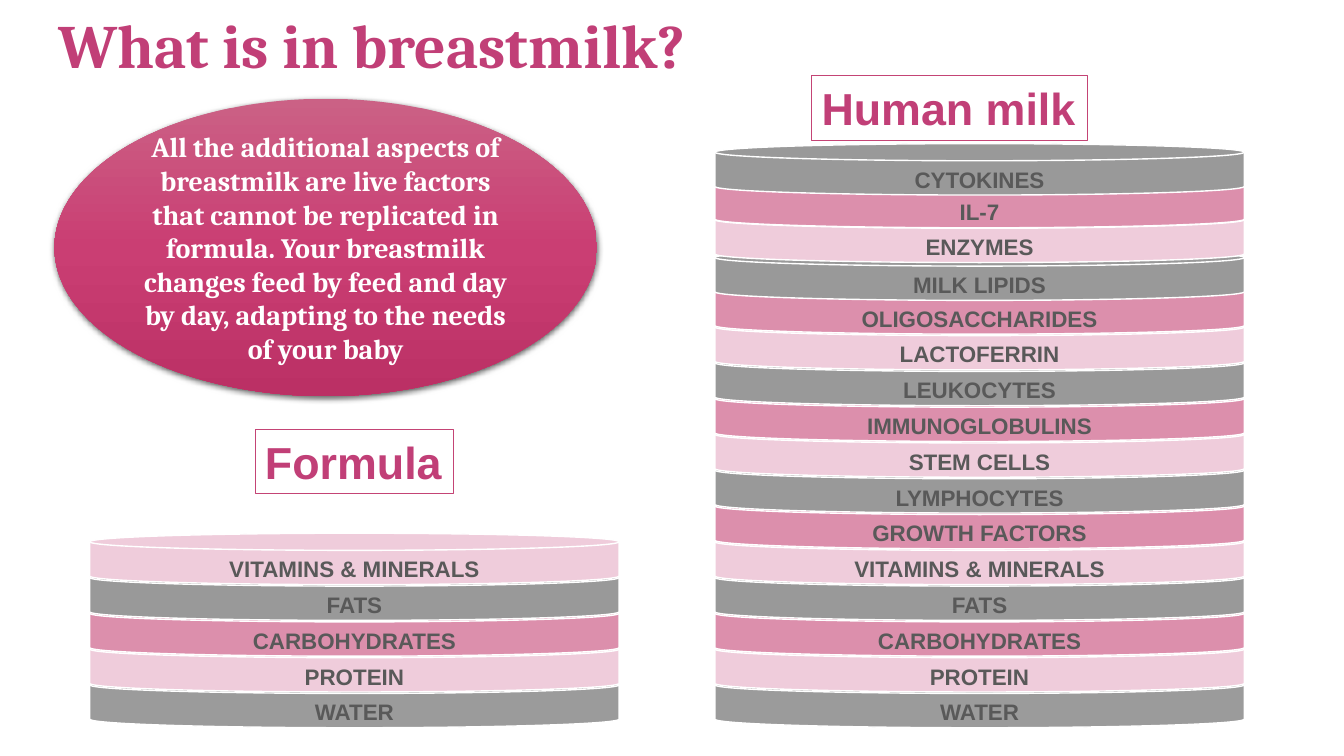
import pptx
import pptx.dml.color
import pptx.enum.shapes
import pptx.enum.text
import pptx.oxml
import pptx.oxml.ns
import pptx.util
from pptx.util import Inches

COLORS = {
    "title": "C13F77", "border": "C44475", "label": "595959", "white": "FFFFFF",
    "base": "9B9B9B", "gray": "999999", "pale": "EFCCDB", "rose": "DC8FAC",
    "top": "CB6185", "middle": "CA3E73", "bottom": "BB3065", "shadow": "000000",
}
TITLE = "What is in breastmilk?"
MESSAGE = (
    "All the additional aspects of breastmilk are live factors that cannot be "
    "replicated in formula. Your breastmilk changes feed by feed and day by day, "
    "adapting to the needs of your baby"
)
HEADINGS = [
    ("Formula", (2.53, 4.26, 1.97, 0.64)),
    ("Human milk", (8.05, 0.75, 2.74, 0.64)),
]
SHARED = ["WATER", "PROTEIN", "CARBOHYDRATES", "FATS", "VITAMINS & MINERALS"]
HUMAN_ONLY = [
    "GROWTH FACTORS", "LYMPHOCYTES", "STEM CELLS", "IMMUNOGLOBULINS",
    "LEUKOCYTES", "LACTOFERRIN", "OLIGOSACCHARIDES", "MILK LIPIDS",
    "ENZYMES", "IL-7", "CYTOKINES",
]
STACKS = [(0.89, SHARED), (7.09, SHARED + HUMAN_ONLY)]
LAYER_FILLS = ["gray", "pale", "rose"]
# Small downward shifts from the even spacing.
SHIFTS = {"MILK LIPIDS": 0.02, "IL-7": 0.01, "CYTOKINES": 0.04}
BASE_TOP, LAYER_STEP = 6.71, 0.355
LAYER_WIDTH, LAYER_HEIGHT = 5.25, 0.51
MESSAGE_PLACE = (0.54, 0.98, 5.38, 2.95)
TITLE_PLACE = (0.48, 0.12, 10.78, 0.72)

SHAPES = pptx.enum.shapes.MSO_SHAPE
ALIGN = pptx.enum.text.PP_ALIGN
ANCHOR = pptx.enum.text.MSO_ANCHOR


def color(name):
    return pptx.dml.color.RGBColor.from_string(COLORS[name])


def write(box, text, font, size, ink, align, anchor, wrap=True):
    frame = box.text_frame
    for name, value in {"word_wrap": wrap, "vertical_anchor": anchor}.items():
        setattr(frame, name, value)
    para = frame.paragraphs[0]
    para.alignment = align
    span = para.add_run()
    span.text = text
    for name, value in {"name": font, "size": pptx.util.Pt(size), "bold": True}.items():
        setattr(span.font, name, value)
    span.font.color.rgb = color(ink)
    return para


def add_shape(page, kind, place, fill=None, line=None, width=1):
    shape = page.shapes.add_shape(kind, *map(Inches, place))
    shape.shadow.inherit = False
    if fill:
        shape.fill.solid()
        shape.fill.fore_color.rgb = color(fill)
    else:
        shape.fill.background()
    if line:
        shape.line.color.rgb = color(line)
        shape.line.width = pptx.util.Pt(width)
    else:
        shape.line.fill.background()
    return shape


def add_title(page):
    box = page.shapes.add_textbox(*map(Inches, TITLE_PLACE))
    para = write(box, TITLE, "Cambria", 44, "title", ALIGN.LEFT, ANCHOR.MIDDLE)
    para.line_spacing = 0.9


def add_heading(page, text, place):
    box = add_shape(page, SHAPES.RECTANGLE, place, line="border", width=0.75)
    write(box, text, "Arial", 32, "title", ALIGN.LEFT, ANCHOR.TOP, wrap=False)
    box.text_frame.auto_size = pptx.enum.text.MSO_AUTO_SIZE.SHAPE_TO_FIT_TEXT


def add_stack(page, left, layers):
    """Pile the layers upward from the base, each overlapping the one below."""
    for index, text in enumerate(layers):
        top = BASE_TOP - index * LAYER_STEP + SHIFTS.get(text, 0)
        fill = LAYER_FILLS[index % len(LAYER_FILLS)] if index else "base"
        disk = add_shape(page, SHAPES.FLOWCHART_MAGNETIC_DISK,
                         (left, top, LAYER_WIDTH, LAYER_HEIGHT), fill, "white")
        write(disk, text, "Arial", 16, "label", ALIGN.CENTER, ANCHOR.TOP)


def add_message(page):
    oval = add_shape(page, SHAPES.OVAL, MESSAGE_PLACE)
    write(oval, MESSAGE, "Cambria", 20, "white", ALIGN.CENTER, ANCHOR.MIDDLE)
    oval.fill.gradient()
    oval.fill.gradient_angle = 270
    namespace = pptx.oxml.ns.nsdecls("a")
    properties = oval.element.spPr
    stops = properties.find(".//" + pptx.oxml.ns.qn("a:gsLst"))
    for stop in list(stops):
        stops.remove(stop)
    for position, name in [(0, "top"), (50, "middle"), (100, "bottom")]:
        stops.append(pptx.oxml.parse_xml(
            f'<a:gs {namespace} pos="{position * 1000}">'
            f'<a:srgbClr val="{COLORS[name]}"/></a:gs>'))
    effects = properties.find(pptx.oxml.ns.qn("a:effectLst"))
    effects.append(pptx.oxml.parse_xml(
        f'<a:outerShdw {namespace} blurRad="{pptx.util.Pt(4.5)}" '
        f'dist="{pptx.util.Pt(1.5)}" dir="5400000" rotWithShape="0">'
        f'<a:srgbClr val="{COLORS["shadow"]}"><a:alpha val="63000"/></a:srgbClr>'
        '</a:outerShdw>'))


def main():
    deck = pptx.Presentation()
    deck.slide_width, deck.slide_height = Inches(13.33), Inches(7.5)
    page = deck.slides.add_slide(deck.slide_layouts[6])
    add_title(page)
    for text, place in HEADINGS:
        add_heading(page, text, place)
    for left, layers in STACKS:
        add_stack(page, left, layers)
    add_message(page)
    deck.save("out.pptx")


if __name__ == "__main__":
    main()
